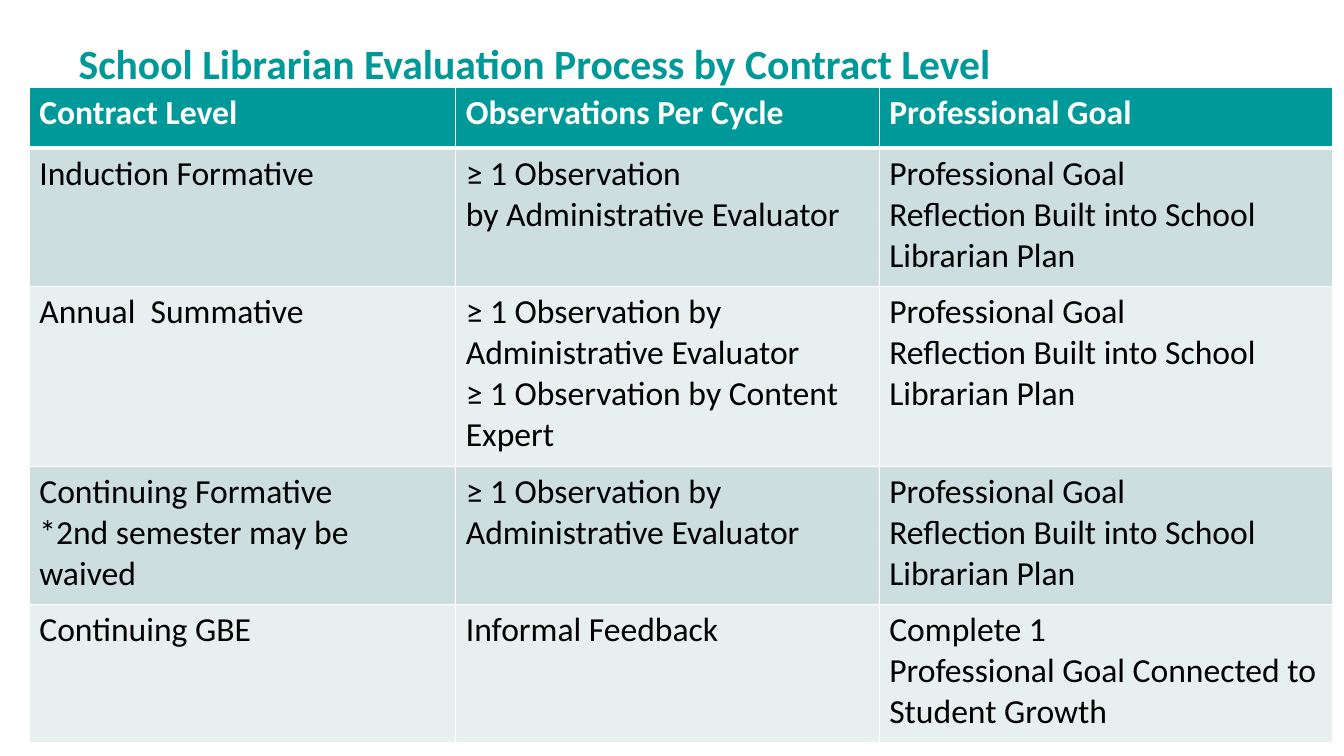
from dataclasses import dataclass

from lxml.etree import SubElement
from pptx import Presentation
from pptx.dml.color import RGBColor
from pptx.enum.text import MSO_ANCHOR
from pptx.oxml.ns import qn
from pptx.util import Inches, Pt

# Content: "~" ties two words together with a non-breaking space
TITLE = "School Librarian~Evaluation Process by Contract Level"
HEADINGS = ["Contract Level", "Observations Per~Cycle", "Professional Goal"]
PLAN_GOAL = "Professional Goal Reflection~Built into School Librarian Plan"
LEVELS = [
    (["Induction Formative"],
     ["≥ 1 Observation by~Administrative Evaluator"],
     [PLAN_GOAL]),
    (["Annual~ Summative"],
     ["≥ 1 Observation by Administrative Evaluator",
      "≥ 1 Observation~by Content Expert"],
     [PLAN_GOAL]),
    (["Continuing Formative", "*2nd semester~may be waived"],
     ["≥ 1 Observation~by Administrative Evaluator"],
     [PLAN_GOAL]),
    (["Continuing GBE"],
     ["Informal Feedback"],
     ["Complete 1 Professional~Goal~Connected to Student Growth"]),
]


@dataclass(frozen=True)
class Theme:
    font: str = "Calibri"
    teal: str = "00999A"
    bands: tuple = ("CCDEDE", "E7EFEF")
    white: str = "FFFFFF"
    ink: str = "000000"
    title_size: float = 29.7
    table_size: float = 24
    thin: float = 1
    thick: float = 3


THEME = Theme()

# Layout in inches
SLIDE_SIZE = (13.33, 7.5)
TITLE_BOX = (0.78, 0.49, 11.82, 0.38)
TABLE_ORIGIN = (0.29, 0.87)
COLUMNS = [4.23, 4.2, 4.5]
HEADING_HEIGHT = 0.6
LEVEL_HEIGHTS = [1.37, 1.79, 1.37, 1.37]


def write(frame, paragraphs, *, size, color, bold=False, spacing=None):
    for number, words in enumerate(paragraphs):
        paragraph = frame.add_paragraph() if number else frame.paragraphs[0]
        paragraph.line_spacing = spacing
        run = paragraph.add_run()
        run.text = words.replace("~", chr(160))
        run.font.name = THEME.font
        run.font.size = Pt(size)
        run.font.bold = bold
        run.font.color.rgb = RGBColor.from_string(color)


def draw_borders(cell, **widths):
    properties = cell._tc.get_or_add_tcPr()
    for side in "LRTB":
        width = widths.get(side, THEME.thin)
        border = SubElement(properties, qn(f"a:ln{side}"), w=str(Pt(width)))
        paint = SubElement(border, qn("a:solidFill"))
        SubElement(paint, qn("a:srgbClr"), val=THEME.white)


def fill_cell(cell, paragraphs, fill, *, color, bold=False, **border_widths):
    draw_borders(cell, **border_widths)
    cell.fill.solid()
    cell.fill.fore_color.rgb = RGBColor.from_string(fill)
    write(cell.text_frame, paragraphs, size=THEME.table_size, color=color, bold=bold)


def add_title(slide):
    frame = slide.shapes.add_textbox(*map(Inches, TITLE_BOX)).text_frame
    frame.word_wrap = True
    frame.vertical_anchor = MSO_ANCHOR.BOTTOM
    frame.margin_left = frame.margin_right = 0
    frame.margin_top = frame.margin_bottom = 0
    write(frame, [TITLE], size=THEME.title_size, color=THEME.teal,
          bold=True, spacing=0.85)


def add_levels(slide):
    heights = [HEADING_HEIGHT, *LEVEL_HEIGHTS]
    extent = (*TABLE_ORIGIN, sum(COLUMNS), sum(heights))
    table = slide.shapes.add_table(
        len(heights), len(COLUMNS), *map(Inches, extent)).table
    for column, width in zip(table.columns, COLUMNS):
        column.width = Inches(width)
    for row, height in zip(table.rows, heights):
        row.height = Inches(height)

    # Heading row
    for column, heading in enumerate(HEADINGS):
        fill_cell(table.cell(0, column), [heading], THEME.teal,
                  color=THEME.white, bold=True, B=THEME.thick)

    # One banded row per contract level
    for number, level in enumerate(LEVELS):
        band = THEME.bands[number % 2]
        top = THEME.thin if number else THEME.thick
        for column, paragraphs in enumerate(level):
            fill_cell(table.cell(number + 1, column), paragraphs, band,
                      color=THEME.ink, T=top)


def main():
    deck = Presentation()
    deck.slide_width, deck.slide_height = map(Inches, SLIDE_SIZE)
    slide = deck.slides.add_slide(deck.slide_layouts[6])
    add_title(slide)
    add_levels(slide)
    deck.save("out.pptx")


if __name__ == "__main__":
    main()
